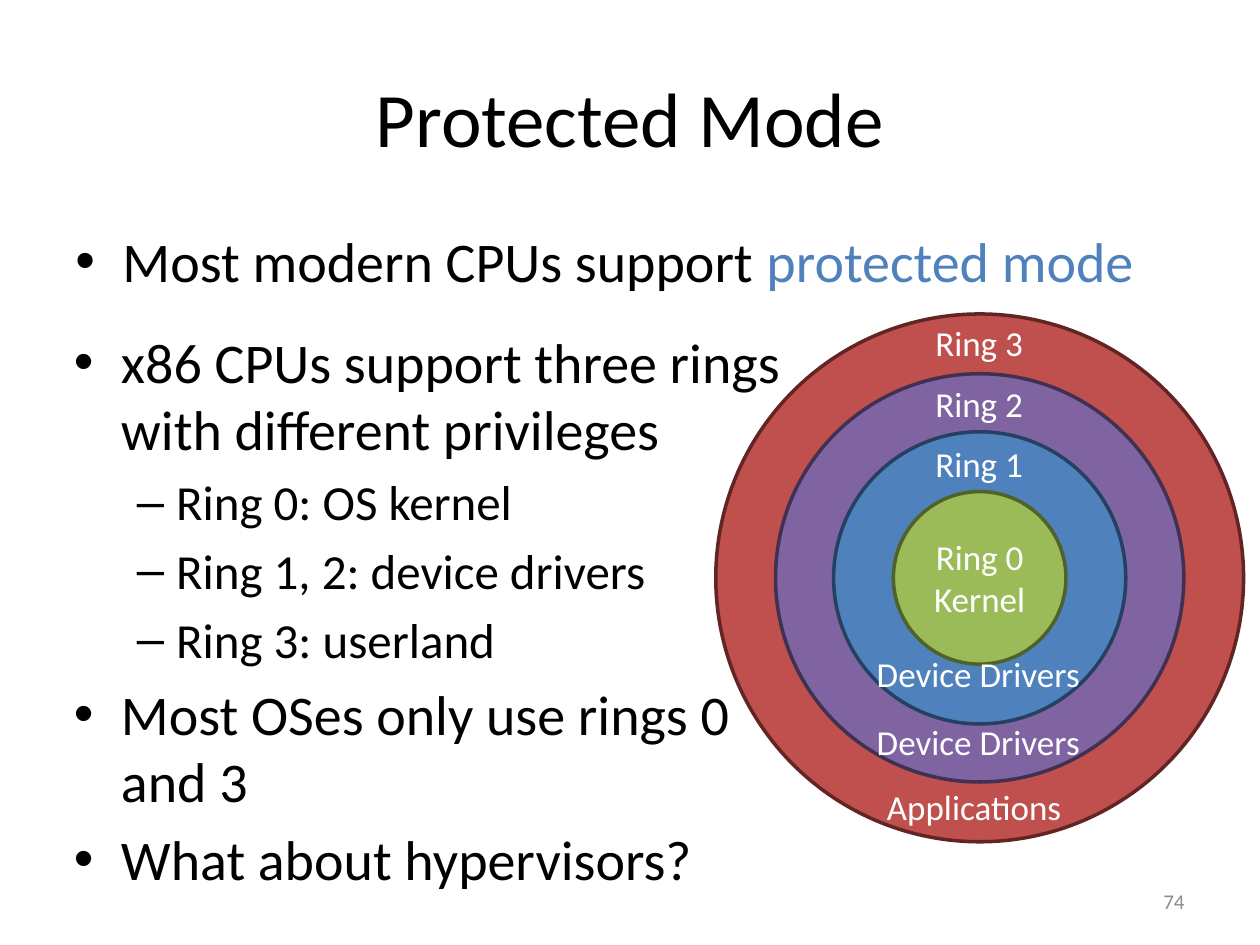
from dataclasses import dataclass

from lxml.etree import SubElement
from pptx import Presentation
from pptx.dml.color import RGBColor
from pptx.enum.shapes import MSO_SHAPE
from pptx.enum.text import MSO_ANCHOR, MSO_AUTO_SIZE, PP_ALIGN
from pptx.oxml.ns import qn
from pptx.slide import Slide
from pptx.util import Cm, Pt

BLACK, WHITE, GREY, BLUE = "000000", "FFFFFF", "8C8C8C", "4F81BD"
CENTER_X, CENTER_Y = 19.75, 11.65
RINGS = [
    (10.64, "C0504D", "632523", ""),
    (8.23, "8064A2", "403152", ""),
    (5.89, BLUE, "254061", ""),
    (3.48, "9BBB59", "4F6228", "Ring 0\nKernel"),
]
LABELS = [
    ("Ring 3", 6.35, 2.29),
    ("Ring 2", 7.59, 2.29),
    ("Ring 1", 8.79, 2.29),
    ("Device Drivers", 13.03, 4.65),
    ("Device Drivers", 14.4, 4.65),
    ("Applications", 15.72, 4.24),
]
POINTS = [
    (0, "x86 CPUs support three rings with different privileges"),
    (1, "Ring 0: OS kernel"),
    (1, "Ring 1, 2: device drivers"),
    (1, "Ring 3: userland"),
    (0, "Most OSes only use rings 0 and 3"),
    (0, "What about hypervisors?"),
]
LEVELS = [("•", 32, 0.95, 0.95), ("–", 28, 2.06, 0.79)]


def color(value):
    return RGBColor.from_string(value)


@dataclass
class Painter:
    """Draws styled elements on the current slide."""

    page: Slide
    font: str = "Calibri"

    def style(self, span, size, ink):
        span.font.name = self.font
        span.font.size = Pt(size)
        span.font.color.rgb = color(ink)

    def fill_text(self, frame, text, size, ink, align):
        frame.text = text
        for para in frame.paragraphs:
            para.alignment = align
            for span in para.runs:
                self.style(span, size, ink)

    def box(self, left, top, width, height):
        box = self.page.shapes.add_textbox(Cm(left), Cm(top), Cm(width), Cm(height))
        box.text_frame.word_wrap = True
        return box.text_frame

    def text(self, area, text, size, ink, align=PP_ALIGN.CENTER):
        frame = self.box(*area)
        frame.vertical_anchor = MSO_ANCHOR.MIDDLE
        self.fill_text(frame, text, size, ink, align)

    def label(self, text, top, width):
        frame = self.box(CENTER_X - width / 2, top, width, 1.12)
        frame.word_wrap = False
        frame.auto_size = MSO_AUTO_SIZE.SHAPE_TO_FIT_TEXT
        self.fill_text(frame, text, 20, WHITE, PP_ALIGN.LEFT)

    def ring(self, diameter, fill, line, text):
        ring = self.page.shapes.add_shape(
            MSO_SHAPE.OVAL, Cm(CENTER_X - diameter / 2), Cm(CENTER_Y - diameter / 2),
            Cm(diameter), Cm(diameter))
        ring.shadow.inherit = False
        ring.fill.solid()
        ring.fill.fore_color.rgb = color(fill)
        ring.line.color.rgb = color(line)
        ring.line.width = Pt(2)
        if text:
            ring.text_frame.vertical_anchor = MSO_ANCHOR.MIDDLE
            self.fill_text(ring.text_frame, text, 20, WHITE, PP_ALIGN.CENTER)

    def bullets(self, area, points):
        frame = self.box(*area)
        frame.text = "\n".join(text for _, text in points)
        for para, (level, _) in zip(frame.paragraphs, points):
            mark, size, margin, hanging = LEVELS[level]
            para.level = level
            para.space_before = Pt(size * 0.2)
            self.style(para.runs[0], size, BLACK)
            properties = para._p.get_or_add_pPr()
            properties.set("marL", str(Cm(margin)))
            properties.set("indent", str(-Cm(hanging)))
            SubElement(properties, qn("a:buFont"), typeface="Arial")
            SubElement(properties, qn("a:buChar"), char=mark)
        return frame


def main():
    deck = Presentation()
    deck.slide_width, deck.slide_height = Cm(25.4), Cm(19.05)
    painter = Painter(deck.slides.add_slide(deck.slide_layouts[6]))

    painter.text((1.27, 0.76, 22.86, 3.18), "Protected Mode", 44, BLACK)
    intro = painter.bullets((1.27, 4.45, 22.86, 1.93), [(0, "Most modern CPUs support ")])
    accent = intro.paragraphs[0].add_run()
    accent.text = "protected mode"
    painter.style(accent, 32, BLUE)

    for ring in RINGS:
        painter.ring(*ring)
    for label in LABELS:
        painter.label(*label)

    painter.bullets((1.24, 6.48, 15.47, 12.57), POINTS)
    painter.text((18.21, 17.65, 5.92, 1.02), "74", 12, GREY, PP_ALIGN.RIGHT)
    deck.save("out.pptx")


if __name__ == "__main__":
    main()
